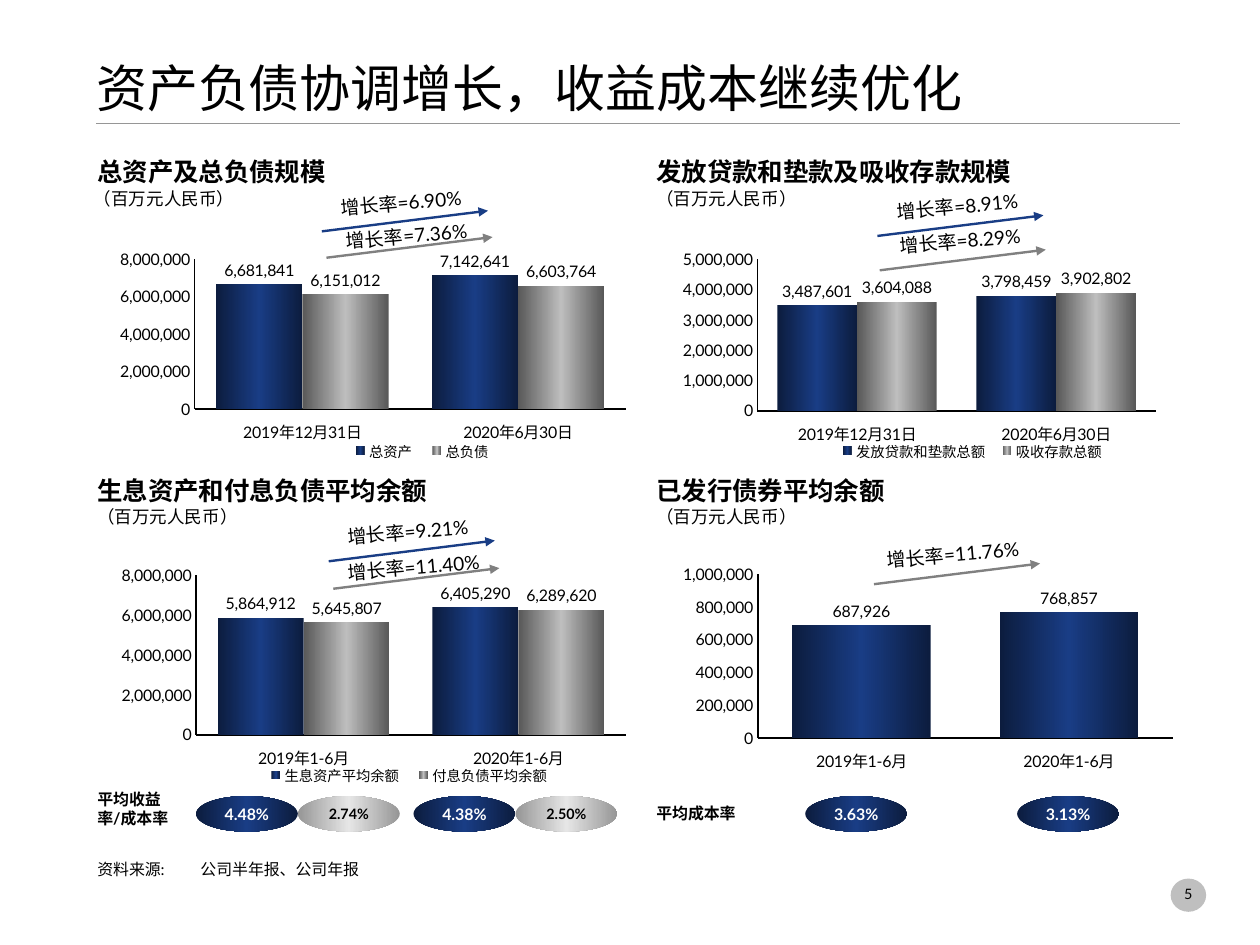
from lxml import etree
from pptx import Presentation
from pptx.chart.data import CategoryChartData
from pptx.dml.color import RGBColor
from pptx.enum.chart import XL_CHART_TYPE as ChartType, XL_LABEL_POSITION as LabelPosition
from pptx.enum.chart import XL_LEGEND_POSITION as LegendPosition, XL_TICK_LABEL_POSITION as TickLabels
from pptx.enum.chart import XL_TICK_MARK as TickMark
from pptx.enum.shapes import MSO_CONNECTOR as Connector, MSO_SHAPE as Shape
from pptx.enum.text import MSO_ANCHOR as Anchor, PP_ALIGN as Align
from pptx.oxml import parse_xml
from pptx.oxml.ns import nsdecls, qn
from pptx.util import Pt

PX = 9144  # 100 px to the inch
FONT = "Lato"
BLUE, GREY = "193D85", "808080"
BLUE_BLEND = ("0C1C3E", BLUE)
BAR_GREY_BLEND = ("585858", "BEBEBE")
OVAL_GREY_BLEND = ("969696", "E6E6E6")
color = RGBColor.from_string


def write(shape, text, size, bold=False, ink="000000", align=Align.LEFT,
          anchor=Anchor.TOP, margins=(0, 0, 0, 0), wrap=True):
    frame = shape.text_frame
    frame.margin_left, frame.margin_top, frame.margin_right, frame.margin_bottom = (
        margin * PX for margin in margins)
    frame.word_wrap = wrap
    frame.vertical_anchor = anchor
    paragraph = frame.paragraphs[0]
    paragraph.text = text
    paragraph.alignment = align
    font = paragraph.runs[0].font
    font.name, font.size, font.bold = FONT, Pt(size), bold
    font.color.rgb = color(ink)
    return paragraph


def blend(fill, element, edge, middle):
    """Horizontal gradient, dark at both edges."""
    fill.gradient()
    fill.gradient_angle = 0
    stops = next(element.iter(qn("a:gsLst")))
    for stop in list(stops):
        stops.remove(stop)
    for position, shade in ((0, edge), (50000, middle), (100000, edge)):
        stop = etree.SubElement(stops, qn("a:gs"), pos=str(position))
        etree.SubElement(stop, qn("a:srgbClr"), val=shade)


presentation = Presentation()
presentation.slide_width, presentation.slide_height = 1100 * PX, 825 * PX
slide = presentation.slides.add_slide(presentation.slide_layouts[6])
shapes = slide.shapes

# Plain texts: left, top, width, height, text, size, formatting
unit = "（百万元人民币）"
heading = dict(bold=True, margins=(0, 0, 0, 4))
label = dict(bold=True, margins=(0, 5, 0, 5))
texts = [
    (84, 0, 946, 103, "资产负债协调增长，收益成本继续优化", 32, dict(anchor=Anchor.BOTTOM)),
    (85, 136, 460, 40, "总资产及总负债规模", 16, heading),
    (573, 136, 460, 40, "发放贷款和垫款及吸收存款规模", 16, heading),
    (85, 415, 460, 40, "生息资产和付息负债平均余额", 16, heading),
    (573, 415, 460, 40, "已发行债券平均余额", 16, heading),
    (82, 164, 460, 23, unit, 11, {}),
    (573, 164, 460, 23, unit, 11, {}),
    (85, 442, 460, 23, unit, 11, {}),
    (573, 442, 460, 23, unit, 11, {}),
    (85, 684, 79, 44, "平均收益率/成本率", 10, label),
    (573, 697, 79, 27, "平均成本率", 10, label),
]
for left, top, width, height, text, size, style in texts:
    box = shapes.add_textbox(left * PX, top * PX, width * PX, height * PX)
    write(box, text, size, **style)

# Charts: place, categories, axis top and step, plot layout, legend layout, series
year_ends = ("2019年12月31日", "2020年6月30日")
half_years = ("2019年1-6月", "2020年1-6月")
charts = [
    ((85, 186, 462, 223), year_ends, 8000000, 2000000,
     (0.184, 0.182, 0.816, 0.586), (0.46, 0.89, 0.31, 0.1),
     {"总资产": (6681841, 7142641), "总负债": (6151012, 6603764)}),
    ((573, 186, 460, 223), year_ends, 5000000, 1000000,
     (0.192, 0.182, 0.756, 0.593), (0.33, 0.89, 0.54, 0.1),
     {"发放贷款和垫款总额": (3487601, 3798459), "吸收存款总额": (3604088, 3902802)}),
    ((85, 460, 462, 233), half_years, 8000000, 2000000,
     (0.187, 0.182, 0.813, 0.598), (0.3, 0.88, 0.58, 0.1),
     {"生息资产平均余额": (5864912, 6405290), "付息负债平均余额": (5645807, 6289620)}),
    ((574, 460, 458, 233), half_years, 1000000, 200000,
     (0.191, 0.178, 0.791, 0.614), None,
     {"已发行债券平均余额": (687926, 768857)}),
]
for place, categories, maximum, step, plot_layout, legend_layout, series_values in charts:
    data = CategoryChartData(number_format="#,##0")
    data.categories = categories
    for name, values in series_values.items():
        data.add_series(name, values)
    chart = shapes.add_chart(ChartType.COLUMN_CLUSTERED, *(n * PX for n in place), data).chart
    chart.has_title = False
    chart.font.name, chart.font.size = FONT, Pt(9)
    chart.font.color.rgb = color("000000")

    for axis in (chart.category_axis, chart.value_axis):
        axis.has_major_gridlines = False
        axis.major_tick_mark = axis.minor_tick_mark = TickMark.NONE
        axis.tick_labels.font.size = Pt(10)
        axis.format.line.color.rgb = color("000000")
        axis.format.line.width = Pt(1)
    chart.category_axis.tick_label_position = TickLabels.LOW
    value_axis = chart.value_axis
    value_axis.minimum_scale, value_axis.maximum_scale = 0, maximum
    value_axis.major_unit = step
    value_axis.tick_labels.number_format = "#,##0"
    value_axis.tick_labels.number_format_is_linked = False

    plot = chart.plots[0]
    plot.gap_width, plot.overlap = 50, 0
    plot.vary_by_categories = False
    plot.has_data_labels = True
    labels = plot.data_labels
    labels.show_value = True
    labels.position = LabelPosition.OUTSIDE_END
    labels.number_format, labels.number_format_is_linked = "#,##0", False
    labels.font.size = Pt(10)
    for series, colors in zip(plot.series, (BLUE_BLEND, BAR_GREY_BLEND)):
        blend(series.format.fill, series._element, *colors)

    # Fixed positions of plot area and legend
    plot_area = chart._chartSpace.chart.plotArea
    for old in plot_area.findall(qn("c:layout")):
        plot_area.remove(old)
    layouts = [(plot_area, 0, plot_layout, '<c:layoutTarget val="inner"/>')]
    chart.has_legend = legend_layout is not None
    if legend_layout:
        chart.legend.position = LegendPosition.BOTTOM
        chart.legend.include_in_layout = False
        chart.legend.font.size = Pt(9)
        legend = chart.legend._element
        for old in legend.findall(qn("c:layout")):
            legend.remove(old)
        layouts.append((legend, 1, legend_layout, ""))
    for parent, index, (x, y, w, h), target in layouts:
        parent.insert(index, parse_xml(
            f'<c:layout {nsdecls("c")}><c:manualLayout>{target}'
            f'<c:xMode val="edge"/><c:yMode val="edge"/><c:x val="{x}"/><c:y val="{y}"/>'
            f'<c:w val="{w}"/><c:h val="{h}"/></c:manualLayout></c:layout>'))

# Growth rates: label left and top, arrow start, rate, colour
growth_rates = [
    (280, 167, 281, 202, "6.90%", BLUE),
    (285, 196, 285, 225, "7.36%", GREY),
    (766, 170, 766, 206, "8.91%", BLUE),
    (768, 200, 768, 236, "8.29%", GREY),
    (286, 454, 287, 490, "9.21%", BLUE),
    (291, 485, 291, 514, "11.40%", GREY),
    (762, 474, 763, 510, "11.76%", GREY),
]
lines = [(84, 108, 1030, 108, "969696", 0.75, False)]
for left, top, x, y, rate, ink in growth_rates:
    box = shapes.add_textbox(left * PX, top * PX, 140 * PX, 20 * PX)
    box.rotation = 355
    write(box, f"增长率={rate}", 12, align=Align.CENTER)
    lines.append((x, y, x + 145, y - 18, ink, 1.5, True))

# Title rule and growth arrows
for x1, y1, x2, y2, ink, weight, has_head in lines:
    connector = shapes.add_connector(Connector.STRAIGHT, x1 * PX, y1 * PX, x2 * PX, y2 * PX)
    connector.line.color.rgb = color(ink)
    connector.line.width = Pt(weight)
    if has_head:
        etree.SubElement(connector.line._get_or_add_ln(), qn("a:tailEnd"), type="triangle")
    etree.SubElement(connector._element.spPr, qn("a:effectLst"))

# Yield and cost ovals
ovals = [
    (171, "4.48%", True), (260, "2.74%", False), (361, "4.38%", True),
    (450, "2.50%", False), (703, "3.63%", True), (888, "3.13%", True),
]
for left, rate, is_blue in ovals:
    oval = shapes.add_shape(Shape.OVAL, left * PX, 695 * PX, 89 * PX, 31 * PX)
    oval.shadow.inherit = False
    oval.line.fill.background()
    blend(oval.fill, oval._element.spPr, *(BLUE_BLEND if is_blue else OVAL_GREY_BLEND))
    write(oval, rate, 10 if is_blue else 9, True, "FFFFFF" if is_blue else "000000",
          Align.CENTER, Anchor.MIDDLE, (4, 4, 4, 4))

# Source line with hanging indent
source = shapes.add_textbox(85 * PX, 746 * PX, 458 * PX, 21 * PX)
paragraph = write(source, "资料来源:\t公司半年报、公司年报", 10, anchor=Anchor.BOTTOM)
properties = paragraph._p.get_or_add_pPr()
properties.set("marL", str(90 * PX))
properties.set("indent", str(-90 * PX))

# Page number
badge = shapes.add_shape(Shape.OVAL, 1022 * PX, 767 * PX, 31 * PX, 29 * PX)
badge.shadow.inherit = False
badge.fill.solid()
badge.fill.fore_color.rgb = color("BFBFBF")
badge.line.fill.background()
number = shapes.add_textbox(996 * PX, 747 * PX, 45 * PX, 41 * PX)
write(number, "5", 9, align=Align.RIGHT, anchor=Anchor.BOTTOM, wrap=False)

presentation.save("out.pptx")
